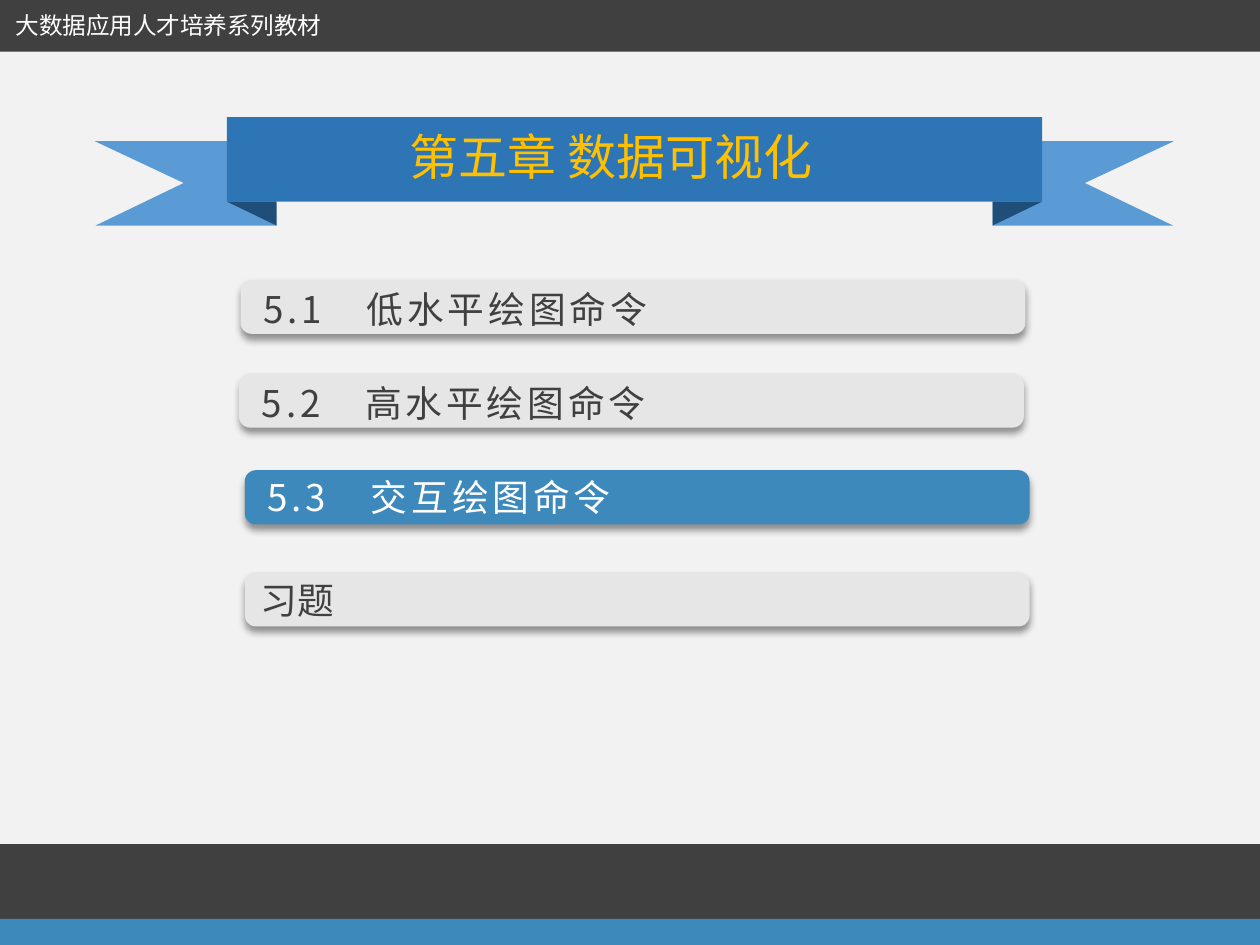
"""Build the chapter 5 agenda slide with its ribbon title."""
from lxml import etree
from pptx import Presentation
from pptx import util as u
from pptx.dml.color import RGBColor
from pptx.enum import shapes, text
from pptx.oxml import ns

FONT = "Noto Sans CJK SC"
PAPER = RGBColor(0xF2, 0xF2, 0xF2)
DARK = RGBColor(0x40, 0x40, 0x40)
ACCENT = RGBColor(0x3D, 0x89, 0xBC)
BAR = RGBColor(0xE6, 0xE6, 0xE6)
WHITE = RGBColor(0xFF, 0xFF, 0xFF)
GOLD = RGBColor(0xFF, 0xC0, 0x00)
RIBBON = RGBColor(0x2E, 0x75, 0xB6)
TAIL = RGBColor(0x5B, 0x9B, 0xD5)
FOLD = RGBColor(0x1F, 0x4E, 0x79)
SHAPE = shapes.MSO_SHAPE
ALIGN = text.PP_ALIGN
ANCHOR = text.MSO_ANCHOR


def write(shape, words, size=21, color=DARK, align=ALIGN.LEFT,
          anchor=ANCHOR.TOP, spacing=0, wrap=True):
    frame = shape.text_frame
    frame.word_wrap = wrap
    frame.auto_size = text.MSO_AUTO_SIZE.NONE
    frame.vertical_anchor = anchor
    paragraph = frame.paragraphs[0]
    paragraph.alignment = align
    run = paragraph.add_run()
    run.text = words
    run.font.size = u.Pt(size)
    run.font.name = FONT
    run.font.color.rgb = color
    properties = run.font._element
    etree.SubElement(properties, ns.qn("a:ea"), typeface=FONT)
    if spacing:
        properties.set("spc", str(round(spacing * 100)))


class SlideBuilder:
    def __init__(self, slide):
        self.slide = slide
        slide.background.fill.solid()
        slide.background.fill.fore_color.rgb = PAPER

    def paint(self, shape, color):
        shape.shadow.inherit = False
        shape.fill.solid()
        shape.fill.fore_color.rgb = color
        shape.line.fill.background()
        return shape

    def block(self, kind, left, top, width, height, color, rotation=0):
        box = map(u.Pt, (left, top, width, height))
        shape = self.paint(self.slide.shapes.add_shape(kind, *box), color)
        shape.rotation = rotation
        return shape

    def polygon(self, points, color):
        points = [(u.Pt(x), u.Pt(y)) for x, y in points]
        builder = self.slide.shapes.build_freeform(*points[0])
        builder.add_line_segments(points[1:], close=True)
        return self.paint(builder.convert_to_shape(), color)

    def label(self, words, left, top, width, height, **style):
        box = map(u.Pt, (left, top, width, height))
        write(self.slide.shapes.add_textbox(*box), words, **style)

    def title(self, words, left, top, width, height, **style):
        title = self.slide.shapes.title
        title.left, title.top, title.width, title.height = map(
            u.Pt, (left, top, width, height))
        self.slide.shapes._spTree.append(title._element)
        write(title, words, **style)

    def bar(self, left, top, color):
        shape = self.block(SHAPE.ROUNDED_RECTANGLE, left, top, 448.5, 31, color)
        shape.adjustments[0] = 0.207
        effects = shape._element.spPr.find(ns.qn("a:effectLst"))
        shadow = etree.SubElement(
            effects, ns.qn("a:outerShdw"), blurRad=str(u.Pt(4)),
            dist=str(u.Pt(3)), dir="5400000", algn="t", rotWithShape="0")
        black = etree.SubElement(shadow, ns.qn("a:srgbClr"), val="000000")
        etree.SubElement(black, ns.qn("a:alpha"), val="40000")
        return shape

    def ribbon(self, words):
        tail = [(54, 80.6), (157.7, 80.6), (157.7, 129), (54.5, 129), (105, 104.6)]
        self.polygon(tail, TAIL)
        self.polygon([(725 - x, y) for x, y in tail], TAIL)
        self.block(SHAPE.RIGHT_TRIANGLE, 129.6, 115.2, 28.4, 13.7, FOLD, 180)
        self.block(SHAPE.RIGHT_TRIANGLE, 574.5, 107.85, 13.7, 28.4, FOLD, 90)
        self.block(SHAPE.RECTANGLE, 129.6, 67, 466, 48.2, RIBBON)
        self.title(words, 224.6, 68.4, 249, 41, size=28, color=GOLD,
                   align=ALIGN.CENTER, wrap=False)


def main():
    presentation = Presentation()
    presentation.slide_width, presentation.slide_height = u.Pt(720), u.Pt(540)
    builder = SlideBuilder(
        presentation.slides.add_slide(presentation.slide_layouts[5]))

    for left, top, width, height, color in (
            (-0.7, -0.7, 721.4, 30.2, DARK),
            (0, 482.4, 720, 43.2, DARK),
            (0, 525, 720, 15, ACCENT)):
        builder.block(SHAPE.RECTANGLE, left, top, width, height, color)
    builder.label("大数据应用人才培养系列教材", 0.7, 2.9, 191.5, 23.8,
                  size=13.5, color=WHITE, align=ALIGN.CENTER, wrap=False)
    builder.ribbon("第五章 数据可视化")

    for words, left, top, rise, fill, color in (
            ("5.1　低水平绘图命令", 137.5, 159.8, 0.7, BAR, DARK),
            ("5.2　高水平绘图命令", 136.6, 213.4, 0.7, BAR, DARK),
            ("5.3　交互绘图命令", 139.9, 268.7, -0.7, ACCENT, WHITE)):
        builder.bar(left, top, fill)
        builder.label(words, left + 6, top + rise, 239, 32.4,
                      color=color, spacing=2.2)
    write(builder.bar(139.9, 327, BAR), "习题", anchor=ANCHOR.MIDDLE)

    presentation.save("out.pptx")


if __name__ == "__main__":
    main()
